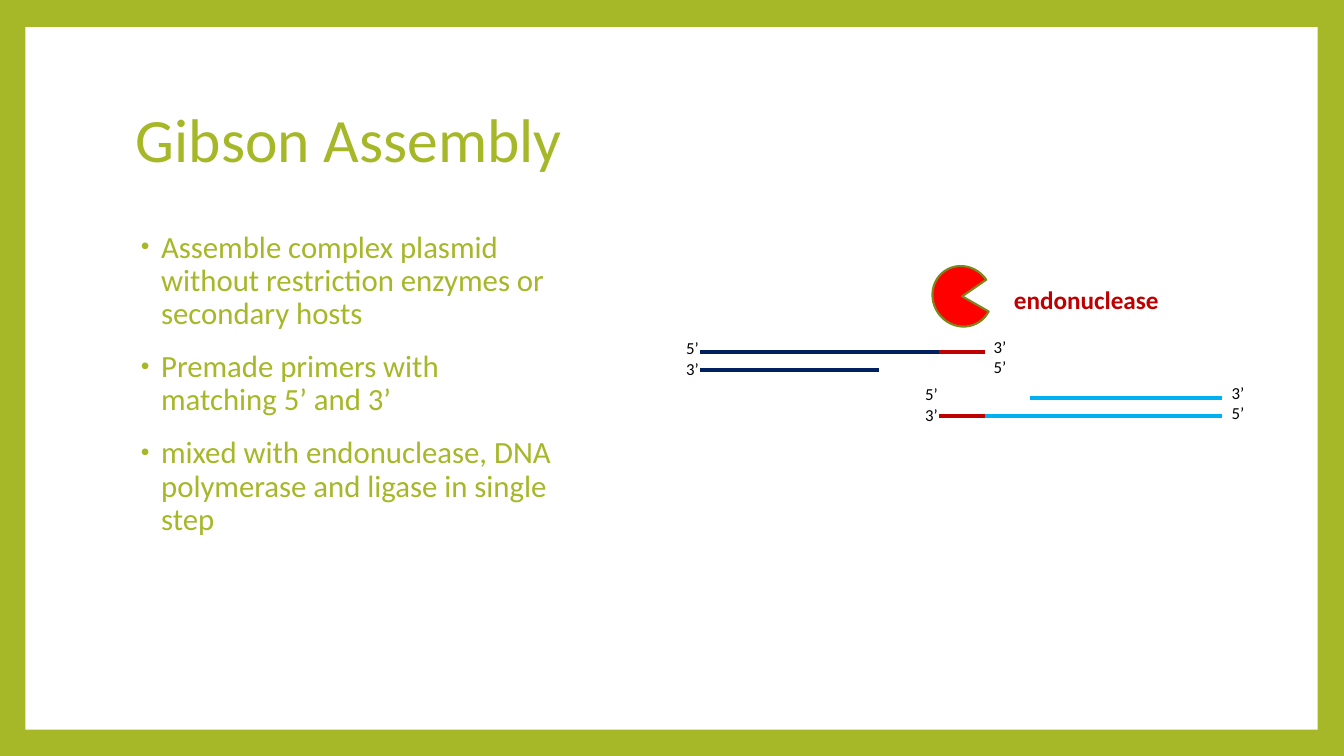
from dataclasses import dataclass

from lxml import etree
from pptx import Presentation
from pptx.dml.color import RGBColor
from pptx.enum.shapes import MSO_CONNECTOR, MSO_SHAPE
from pptx.enum.text import MSO_ANCHOR
from pptx.oxml.ns import qn
from pptx.util import Inches, Pt

STRAIGHT = MSO_CONNECTOR.STRAIGHT
RECTANGLE, PIE = MSO_SHAPE.RECTANGLE, MSO_SHAPE.PIE
TOP, MIDDLE = MSO_ANCHOR.TOP, MSO_ANCHOR.MIDDLE


@dataclass(frozen=True)
class Theme:
    font: str = "Calibri"
    green: str = "A6B727"
    olive: str = "7B871D"
    white: str = "FFFFFF"
    black: str = "000000"
    navy: str = "002060"
    sky: str = "00B0F0"
    red: str = "FF0000"
    crimson: str = "C00000"
    title_size: int = 44
    body_size: int = 22
    label_size: int = 18
    end_size: int = 12
    strand_width: float = 3
    outline_width: float = 1.5


THEME = Theme()

TITLE = "Gibson Assembly"
BULLETS = [
    "Assemble complex plasmid without restriction enzymes or secondary hosts",
    "Premade primers with matching 5’ and 3’",
    "mixed with endonuclease, DNA polymerase and ligase in single step",
]
ENZYME = "endonuclease"

# Lengths are percentages of the slide's width (x) and height (y).
PANEL_BOX = (1.88, 3.6, 96.15, 92.93)
TITLE_BOX = (9.38, 8.93, 81, 19.73)
BODY_BOX = (9.38, 30, 32.7, 58.93)
ENZYME_BOX = (69.3, 35.33, 4.58, 7.73)
ENZYME_LABEL_BOX = (74.7, 36.93, 19.28, 5.33)

STRAND_GAP = 2.4
OVERLAP = (69.83, 73.3)
# Each strand: start x, end x, colour; the overlap is drawn on the long strand.
FRAGMENTS = [
    {"left": 52.05, "right": 73.2, "y": 46.53, "color": THEME.navy,
     "upper": (52.05, 73.2), "lower": (52.05, 65.4), "overlap_row": 0},
    {"left": 69.83, "right": 90.9, "y": 52.67, "color": THEME.sky,
     "upper": (76.65, 90.9), "lower": (69.83, 90.9), "overlap_row": 1},
]
# Each strand end: text, side, x offset from that side, y offset from the upper strand.
STRAND_ENDS = [
    ("5’", "left", -1.73, -2.53),
    ("3’", "left", -1.73, 0.27),
    ("3’", "right", 0, -2.67),
    ("5’", "right", 0, 0),
]
END_SIZE = (3.45, 4)

presentation = Presentation()
presentation.slide_width = Inches(13.33)
presentation.slide_height = Inches(7.5)
slide = presentation.slides.add_slide(presentation.slide_layouts[6])


def across(share):
    return round(presentation.slide_width * share / 100)


def down(share):
    return round(presentation.slide_height * share / 100)


def place(box):
    left, top, width, height = box
    return across(left), down(top), across(width), down(height)


def add_shape(preset, box, fill, line=None):
    shape = slide.shapes.add_shape(preset, *place(box))
    shape.shadow.inherit = False
    shape.fill.solid()
    shape.fill.fore_color.rgb = RGBColor.from_string(fill)
    if line:
        shape.line.color.rgb = RGBColor.from_string(line)
        shape.line.width = Pt(THEME.outline_width)
    else:
        shape.line.fill.background()
    return shape


def add_bullet(paragraph):
    properties = paragraph._p.get_or_add_pPr()
    properties.set("marL", str(Inches(0.25)))
    properties.set("indent", str(-Inches(0.2)))
    color = etree.SubElement(properties, qn("a:buClr"))
    etree.SubElement(color, qn("a:srgbClr"), val=THEME.green)
    etree.SubElement(properties, qn("a:buSzPct"), val="80000")
    etree.SubElement(properties, qn("a:buFont"), typeface="Arial")
    etree.SubElement(properties, qn("a:buChar"), char="•")


def add_text(box, lines, size, color, bold=False, anchor=TOP, spacing=1.0, bullets=False):
    frame = slide.shapes.add_textbox(*place(box)).text_frame
    frame.word_wrap = True
    frame.vertical_anchor = anchor
    for index, line in enumerate(lines):
        paragraph = frame.add_paragraph() if index else frame.paragraphs[0]
        paragraph.text = line
        if bullets:
            add_bullet(paragraph)
        paragraph.line_spacing = spacing
        if index:
            paragraph.space_before = Pt(14)
        paragraph.font.name = THEME.font
        paragraph.font.size = Pt(size)
        paragraph.font.bold = bold
        paragraph.font.color.rgb = RGBColor.from_string(color)


def add_strand(span, y, color):
    start, end = span
    strand = slide.shapes.add_connector(STRAIGHT, across(start), down(y), across(end), down(y))
    strand.line.color.rgb = RGBColor.from_string(color)
    strand.line.width = Pt(THEME.strand_width)
    etree.SubElement(strand._element.spPr, qn("a:effectLst"))


def add_fragment(fragment):
    y = fragment["y"]
    add_strand(fragment["upper"], y, fragment["color"])
    add_strand(fragment["lower"], y + STRAND_GAP, fragment["color"])
    for text, side, offset_x, offset_y in STRAND_ENDS:
        box = (fragment[side] + offset_x, y + offset_y, *END_SIZE)
        add_text(box, [text], THEME.end_size, THEME.black)
    add_strand(OVERLAP, y + fragment["overlap_row"] * STRAND_GAP, THEME.crimson)


slide.background.fill.solid()
slide.background.fill.fore_color.rgb = RGBColor.from_string(THEME.green)
add_shape(RECTANGLE, PANEL_BOX, THEME.white)
add_text(TITLE_BOX, [TITLE], THEME.title_size, THEME.green, anchor=MIDDLE, spacing=0.9)
add_text(BODY_BOX, BULLETS, THEME.body_size, THEME.green, spacing=0.9, bullets=True)

enzyme = add_shape(PIE, ENZYME_BOX, THEME.red, THEME.olive)
enzyme.adjustments[0] = 200.56
enzyme.adjustments[1] = 162
enzyme.rotation = 55.5
add_text(ENZYME_LABEL_BOX, [ENZYME], THEME.label_size, THEME.crimson, bold=True)

for fragment in FRAGMENTS:
    add_fragment(fragment)

presentation.save("out.pptx")
